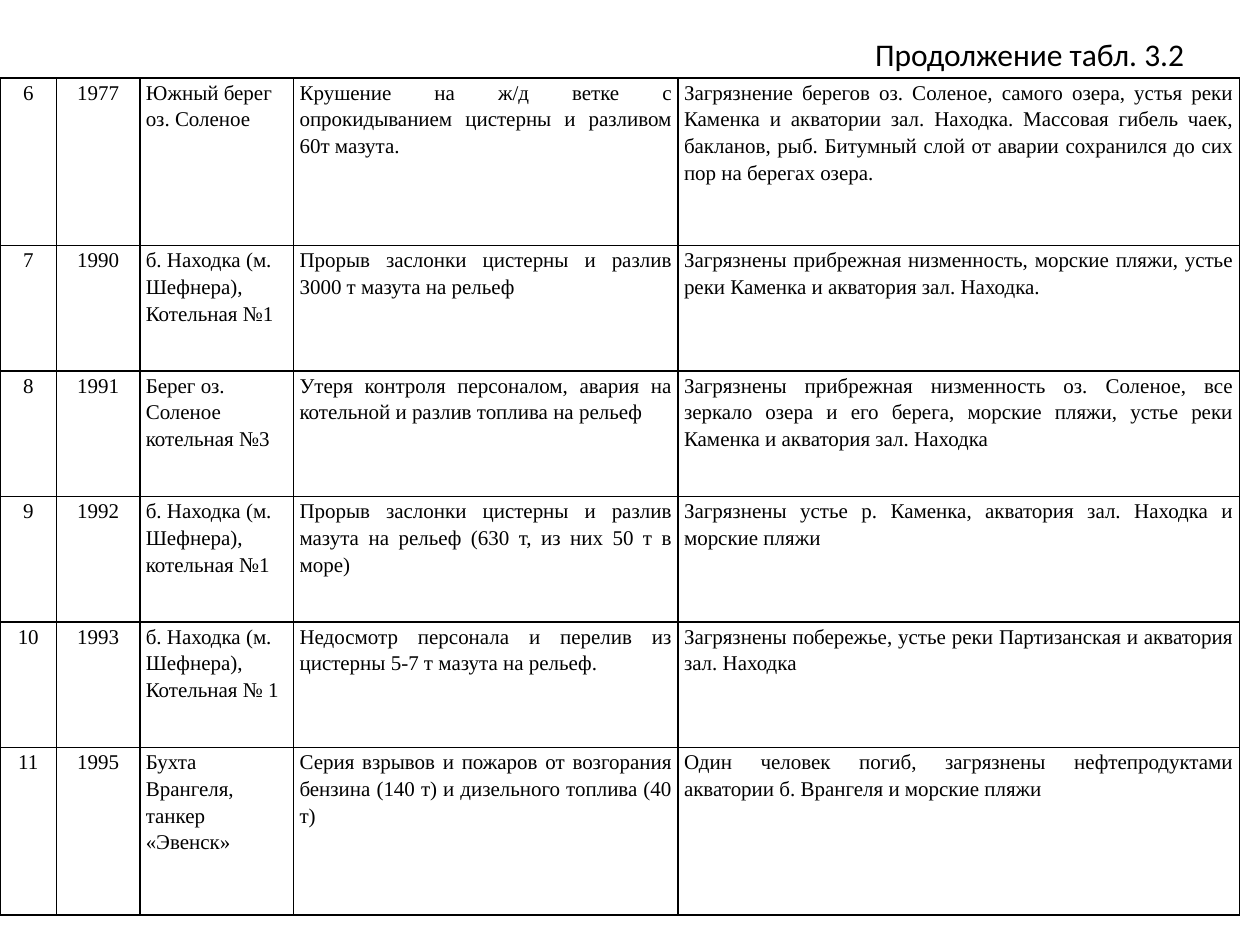
from lxml import etree
from pptx import Presentation
from pptx.dml.color import RGBColor
from pptx.enum import text
from pptx.oxml import ns
from pptx.util import Cm, Pt

BLACK = RGBColor(0, 0, 0)
TITLE = "Продолжение табл. 3.2"
ACCIDENTS = [
    ("6", "1977", "Южный берег оз. Соленое",
     "Крушение на ж/д ветке с опрокидыванием цистерны и разливом 60т мазута.",
     "Загрязнение берегов оз. Соленое, самого озера, устья реки Каменка и акватории "
     "зал. Находка. Массовая гибель чаек, бакланов, рыб. Битумный слой от аварии "
     "сохранился до сих пор на берегах озера."),
    ("7", "1990", "б. Находка (м. Шефнера), Котельная №1",
     "Прорыв заслонки цистерны и разлив 3000 т мазута на рельеф",
     "Загрязнены прибрежная низменность, морские пляжи, устье реки Каменка "
     "и акватория зал. Находка."),
    ("8", "1991", "Берег оз. Соленое котельная №3",
     "Утеря контроля персоналом, авария на котельной и разлив топлива на рельеф",
     "Загрязнены прибрежная низменность оз. Соленое, все зеркало озера и его берега, "
     "морские пляжи, устье реки Каменка и акватория зал. Находка"),
    ("9", "1992", "б. Находка (м. Шефнера), котельная №1",
     "Прорыв заслонки цистерны и разлив мазута на рельеф (630 т, из них 50 т в море)",
     "Загрязнены устье р. Каменка, акватория зал. Находка и морские пляжи"),
    ("10", "1993", "б. Находка (м. Шефнера), Котельная № 1",
     "Недосмотр персонала и перелив из цистерны 5-7 т мазута на рельеф.",
     "Загрязнены побережье, устье реки Партизанская и акватория зал. Находка"),
    ("11", "1995", "Бухта Врангеля, танкер «Эвенск»",
     "Серия взрывов и пожаров от возгорания бензина (140 т) и дизельного топлива (40 т)",
     "Один человек погиб, загрязнены нефтепродуктами акватории б. Врангеля "
     "и морские пляжи"),
]
ALIGN = text.PP_ALIGN
COLUMNS = [(1.14, ALIGN.CENTER), (1.68, ALIGN.CENTER), (3.1, ALIGN.LEFT),
           (7.75, ALIGN.JUSTIFY), (11.32, ALIGN.JUSTIFY)]
ROW_HEIGHTS = [3.38, 2.53, 2.53, 2.53, 2.53, 3.38]


def format_text(para, font_name, size, align):
    para.alignment = align
    for span in para.runs:
        span.font.name = font_name
        span.font.size = Pt(size)
        span.font.color.rgb = BLACK


def add_borders(cell):
    """Draw a 1 pt black line on each side; call before setting the fill."""
    properties = cell._tc.get_or_add_tcPr()
    for side in ("lnL", "lnR", "lnT", "lnB"):
        line = etree.SubElement(properties, ns.qn(f"a:{side}"), w=str(Pt(1)))
        fill = etree.SubElement(line, ns.qn("a:solidFill"))
        etree.SubElement(fill, ns.qn("a:srgbClr"), val=str(BLACK))


def fill_cell(cell, words, align):
    cell.text_frame.text = words
    cell.margin_left = cell.margin_right = Cm(0.12)
    cell.margin_top = cell.margin_bottom = 0
    para = cell.text_frame.paragraphs[0]
    para.line_spacing = 1.15
    format_text(para, "Times New Roman", 12, align)
    add_borders(cell)
    cell.fill.background()


def add_title(page):
    title = page.shapes.title
    title.left, title.top, title.width, title.height = Cm(1.27), Cm(0.76), Cm(22.86), Cm(0.64)
    frame = title.text_frame
    frame.text = TITLE
    frame.auto_size = text.MSO_AUTO_SIZE.NONE
    frame.vertical_anchor = text.MSO_ANCHOR.MIDDLE
    format_text(frame.paragraphs[0], "Calibri", 18, ALIGN.RIGHT)


def add_accidents(page):
    width = sum(size for size, _ in COLUMNS)
    table = page.shapes.add_table(len(ACCIDENTS), len(COLUMNS), 0, Cm(1.57),
                                  Cm(width), Cm(sum(ROW_HEIGHTS))).table
    table.first_row = table.horz_banding = False
    for column, (size, _) in zip(table.columns, COLUMNS):
        column.width = Cm(size)
    for row, height, accident in zip(table.rows, ROW_HEIGHTS, ACCIDENTS):
        row.height = Cm(height)
        for cell, words, (_, align) in zip(row.cells, accident, COLUMNS):
            fill_cell(cell, words, align)


def main():
    deck = Presentation()
    deck.slide_width, deck.slide_height = Cm(25.4), Cm(19.05)
    page = deck.slides.add_slide(deck.slide_layouts.get_by_name("Title Only"))
    add_title(page)
    add_accidents(page)
    deck.save("out.pptx")


if __name__ == "__main__":
    main()
